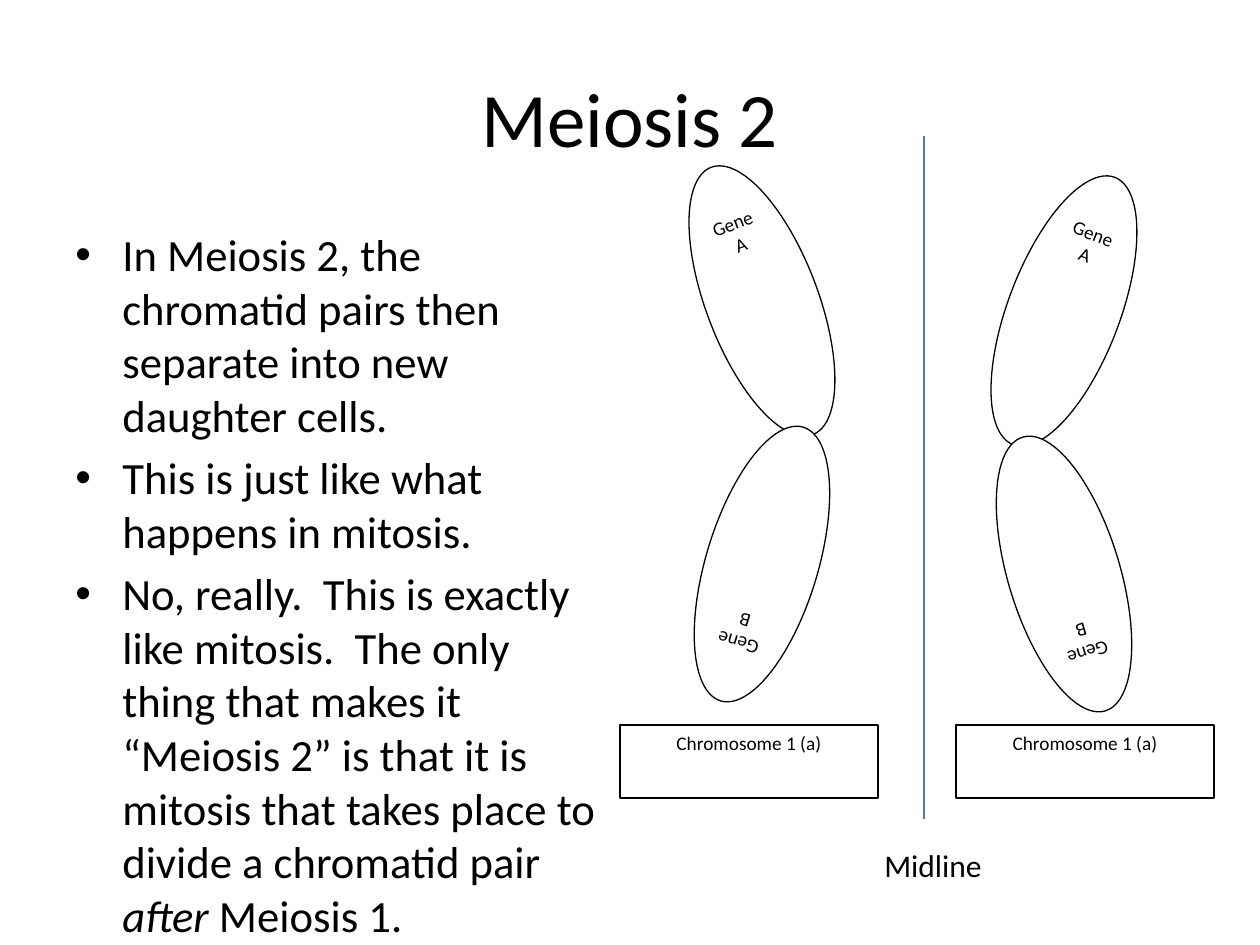
"""Build the Meiosis 2 slide with two separated chromatids."""
from lxml.etree import SubElement
from pptx import Presentation
from pptx.dml.color import RGBColor
from pptx.enum.shapes import MSO_CONNECTOR as Connector, MSO_SHAPE as Shape
from pptx.enum.text import MSO_ANCHOR as Anchor, PP_ALIGN as Align
from pptx.oxml.ns import qn
from pptx.util import Pt

SCALE = 914400 / 126
COLORS = {"ink": "000000", "paper": "FFFFFF", "midline": "4B7EBC"}

TITLE = "Meiosis 2"
POINTS = [
    [("In Meiosis 2, the chromatid pairs then separate into new daughter cells.", False)],
    [("This is just like what happens in mitosis.", False)],
    [("No, really.  This is exactly like mitosis.  The only thing that makes it "
      "“Meiosis 2” is that it is mitosis that takes place to divide a chromatid pair ", False),
     ("after", True), (" Meiosis 1.", False)],
]
CHROMATIDS = [
    {"left": 706, "top": 158, "turns": (339.2, 196.8), "caption_left": 620},
    {"left": 1008, "top": 168, "turns": (20.8, 163.2), "caption_left": 956},
]
GENES = ["Gene A", "Gene B"]
CAPTION = "Chromosome 1 (a)"
ARM_WIDTH, ARM_HEIGHT, ARM_STEP = 112, 286, 263
CAPTION_TOP, CAPTION_WIDTH, CAPTION_HEIGHT = 725, 258, 73
MIDLINE_X, MIDLINE_TOP, MIDLINE_BOTTOM = 924, 136, 819

LABEL_FORMAT = {"alignment": Align.CENTER, "space_after": Pt(10)}
POINT_FORMAT = {"alignment": Align.LEFT, "space_before": Pt(5)}


def px(*lengths):
    return [round(length * SCALE) for length in lengths]


def color(name):
    return RGBColor.from_string(COLORS[name])


def apply(target, values):
    for name, value in values.items():
        setattr(target, name, value)


def write(paragraph, runs, size, paragraph_format):
    apply(paragraph, paragraph_format)
    for words, italic in runs:
        run = paragraph.add_run()
        run.text = words
        apply(run.font, {"name": "Calibri", "size": Pt(size), "italic": italic})
        run.font.color.rgb = color("ink")


def add_text(slide, box, paragraphs, size, paragraph_format, anchor=Anchor.TOP):
    frame = slide.shapes.add_textbox(*px(*box)).text_frame
    apply(frame, {"word_wrap": True, "vertical_anchor": anchor})
    for index, runs in enumerate(paragraphs):
        paragraph = frame.add_paragraph() if index else frame.paragraphs[0]
        write(paragraph, runs, size, paragraph_format)
    return frame


def add_bullet(paragraph):
    properties = paragraph._p.get_or_add_pPr()
    indent = px(47)[0]
    properties.set("marL", str(indent))
    properties.set("indent", str(-indent))
    SubElement(properties, qn("a:buFont"), typeface="Arial")
    SubElement(properties, qn("a:buChar"), char="•")


def add_labelled(shapes, outline, box, label, turn=0):
    part = shapes.add_shape(outline, *px(*box))
    part.rotation = turn
    part.shadow.inherit = False
    part.fill.solid()
    part.fill.fore_color.rgb = color("paper")
    part.line.color.rgb = color("ink")
    part.line.width = Pt(0.75)
    apply(part.text_frame, {"word_wrap": True, "vertical_anchor": Anchor.TOP})
    write(part.text_frame.paragraphs[0], [(label, False)], 11, LABEL_FORMAT)


def add_chromatid(slide, chromatid):
    arms = slide.shapes.add_group_shape().shapes
    for index, (gene, turn) in enumerate(zip(GENES, chromatid["turns"])):
        top = chromatid["top"] + index * ARM_STEP
        add_labelled(arms, Shape.OVAL, (chromatid["left"], top, ARM_WIDTH, ARM_HEIGHT), gene, turn)
    caption_box = (chromatid["caption_left"], CAPTION_TOP, CAPTION_WIDTH, CAPTION_HEIGHT)
    add_labelled(slide.shapes, Shape.RECTANGLE, caption_box, CAPTION)


def add_midline(slide):
    ends = px(MIDLINE_X, MIDLINE_TOP, MIDLINE_X, MIDLINE_BOTTOM)
    midline = slide.shapes.add_connector(Connector.STRAIGHT, *ends)
    midline.line.color.rgb = color("midline")
    midline.line.width = Pt(0.75)
    SubElement(midline._element.spPr, qn("a:effectLst"))
    add_text(slide, (872, 840, 126, 53), [[("Midline", False)]], 18, {"alignment": Align.LEFT})


def main():
    deck = Presentation()
    deck.slide_width, deck.slide_height = px(1260, 945)
    slide = deck.slides.add_slide(deck.slide_layouts[6])
    add_text(slide, (63, 38, 1134, 157), [[(TITLE, False)]], 44,
             {"alignment": Align.CENTER}, Anchor.MIDDLE)
    points = add_text(slide, (63, 221, 557, 624), POINTS, 25.5, POINT_FORMAT)
    for paragraph in points.paragraphs:
        add_bullet(paragraph)
    for chromatid in CHROMATIDS:
        add_chromatid(slide, chromatid)
    add_midline(slide)
    deck.save("out.pptx")


if __name__ == "__main__":
    main()
